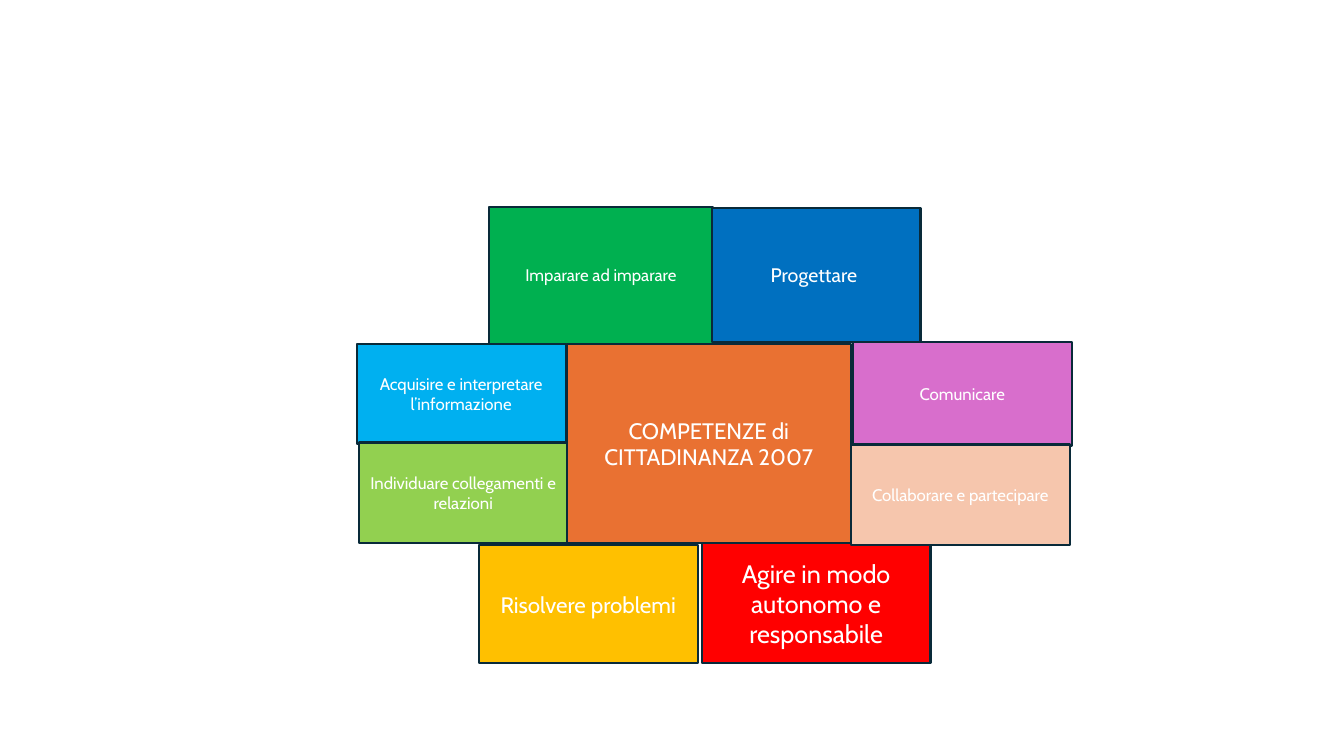
from collections import namedtuple
from dataclasses import dataclass

from pptx import Presentation
from pptx import util as u
from pptx.dml.color import RGBColor
from pptx.enum import shapes, text

Box = namedtuple("Box", "left top width height")
Competence = namedtuple("Competence", "label fill size cells")


@dataclass(frozen=True)
class Theme:
    """Colours, type sizes and grid cell of the slide."""
    font: str = "Cabin"
    ink: str = "FFFFFF"
    border: str = "092A39"
    border_width: float = 1.5
    small: int = 12
    medium: int = 14
    large: int = 16
    huge: int = 18
    cell: float = 0.1


THEME = Theme()
MAP_BOX = Box(35.4, 20.5, 70.9, 45.3)

COMPETENCES = [
    Competence("Comunicare", "D86ECC", THEME.small, Box(49.2, 13.4, 21.7, 10.3)),
    Competence("Agire in modo autonomo e responsabile", "FF0000", THEME.huge,
               Box(34.2, 33.4, 22.7, 11.9)),
    Competence("Risolvere problemi", "FFC000", THEME.large, Box(12.1, 33.6, 21.7, 11.7)),
    Competence("Acquisire e interpretare l’informazione", "00B0F0", THEME.small,
               Box(0, 13.6, 20.7, 10)),
    Competence("Individuare collegamenti e relazioni", "92D050", THEME.small,
               Box(0.2, 23.4, 20.7, 10)),
    Competence("Imparare ad imparare", "00B050", THEME.small, Box(13.1, 0, 22.2, 13.6)),
    Competence("Progettare ", "0070C0", THEME.medium, Box(35.2, 0.1, 20.7, 13.3)),
    Competence("Collaborare e partecipare", "F6C6AD", THEME.small, Box(49, 23.6, 21.7, 10)),
    Competence("COMPETENZE di CITTADINANZA 2007", "E97132", THEME.large,
               Box(20.8, 13.6, 28.2, 19.8)),
]


def apply_format(target, values):
    """Set each named attribute of the target."""
    for name, value in values.items():
        setattr(target, name, value)


def draw_tile(slide, box, competence):
    """Draw one labelled rectangle in a box given in grid cells."""
    tile = slide.shapes.add_shape(
        shapes.MSO_SHAPE.RECTANGLE, *(u.Inches(length * THEME.cell) for length in box))
    tile.shadow.inherit = False
    tile.fill.solid()
    tile.fill.fore_color.rgb = RGBColor.from_string(competence.fill)
    tile.line.color.rgb = RGBColor.from_string(THEME.border)
    tile.line.width = u.Pt(THEME.border_width)
    apply_format(tile.text_frame, {
        "word_wrap": True, "vertical_anchor": text.MSO_ANCHOR.MIDDLE})
    paragraph = tile.text_frame.paragraphs[0]
    paragraph.alignment = text.PP_ALIGN.CENTER
    label = paragraph.add_run()
    label.text = competence.label
    apply_format(label.font, {"name": THEME.font, "size": u.Pt(competence.size)})
    label.font.color.rgb = RGBColor.from_string(THEME.ink)


def draw_competence_map(slide, box):
    """Place the competences around their central title within the box."""
    for competence in COMPETENCES:
        cells = competence.cells
        draw_tile(slide, cells._replace(left=box.left + cells.left, top=box.top + cells.top),
                  competence)


def main():
    """Build and save the presentation."""
    deck = Presentation()
    apply_format(deck, {"slide_width": u.Inches(13.33), "slide_height": u.Inches(7.5)})
    slide = deck.slides.add_slide(deck.slide_layouts[6])
    draw_competence_map(slide, MAP_BOX)
    deck.save("out.pptx")


if __name__ == "__main__":
    main()
